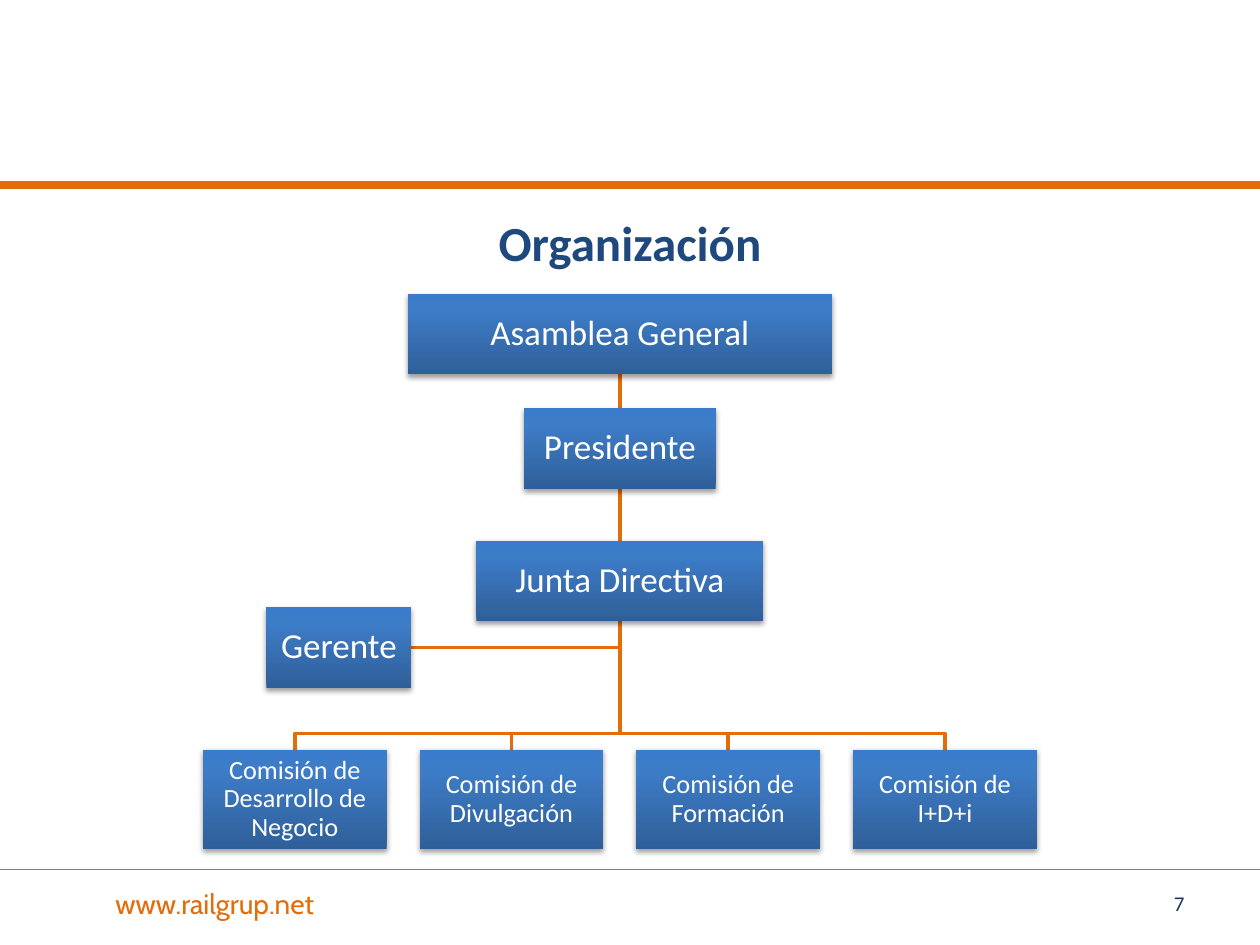
from copy import deepcopy

from lxml import etree
from pptx import Presentation
from pptx.dml.color import RGBColor
from pptx.enum.shapes import MSO_CONNECTOR, MSO_SHAPE
from pptx.enum.text import MSO_ANCHOR, PP_ALIGN
from pptx.oxml.ns import qn
from pptx.util import Inches, Pt

ORANGE = RGBColor(0xE4, 0x6C, 0x0A)
GREY = RGBColor(0x7F, 0x7F, 0x7F)
NAVY = RGBColor(0x1F, 0x49, 0x7D)
DARK_NAVY = RGBColor(0x17, 0x37, 0x5E)
WHITE = RGBColor(0xFF, 0xFF, 0xFF)
BOX_GRADIENT = [
    (0, RGBColor(0x2F, 0x5F, 0x99)),
    (0.8, RGBColor(0x3D, 0x7C, 0xC7)),
    (1, RGBColor(0x3A, 0x7C, 0xCB)),
]
COMMISSIONS = [
    "Comisión de Desarrollo de Negocio",
    "Comisión de Divulgación",
    "Comisión de Formación",
    "Comisión de I+D+i",
]


def write(frame, text, size, color, align, font="Calibri", bold=False):
    """Write one formatted run into a text frame."""
    frame.word_wrap = True
    paragraph = frame.paragraphs[0]
    paragraph.alignment = align
    run = paragraph.add_run()
    run.text = text
    run.font.name = font
    run.font.size = Pt(size)
    run.font.bold = bold
    run.font.color.rgb = color
    return paragraph


def add_line(slide, start, end, color, weight):
    """Draw a straight line without shadow between two points in inches."""
    points = [Inches(value) for value in (*start, *end)]
    line = slide.shapes.add_connector(MSO_CONNECTOR.STRAIGHT, *points)
    line.line.color.rgb = color
    line.line.width = Pt(weight)
    etree.SubElement(line._element.spPr, qn("a:effectLst"))


def add_link(slide, *points):
    """Draw an angled orange link through points given in inches."""
    start, *rest = [(Inches(x), Inches(y)) for x, y in points]
    builder = slide.shapes.build_freeform(*start)
    builder.add_line_segments(rest, close=False)
    link = builder.convert_to_shape()
    link.shadow.inherit = False
    link.fill.background()
    link.line.color.rgb = ORANGE
    link.line.width = Pt(2)


def shade(box):
    """Give a box the blue vertical gradient and a soft shadow below."""
    box.fill.gradient()
    box.fill.gradient_angle = 90
    stop_list = box._element.spPr.find(".//" + qn("a:gsLst"))
    stop_list.append(deepcopy(stop_list[-1]))
    for stop, (position, color) in zip(box.fill.gradient_stops, BOX_GRADIENT):
        stop.position = position
        stop.color.rgb = color
    box.line.fill.background()
    box.shadow.inherit = False
    effects = box._element.spPr.find(qn("a:effectLst"))
    shadow = etree.SubElement(effects, qn("a:outerShdw"), blurRad="40000",
                              dist="20000", dir="5400000", rotWithShape="0")
    black = etree.SubElement(shadow, qn("a:srgbClr"), val="000000")
    etree.SubElement(black, qn("a:alpha"), val="38000")


def add_unit(slide, text, center, top, width, height=0.64, size=20):
    """Add one unit of the organisation, centred on a horizontal position."""
    unit = slide.shapes.add_shape(
        MSO_SHAPE.RECTANGLE, Inches(center - width / 2), Inches(top),
        Inches(width), Inches(height))
    shade(unit)
    frame = unit.text_frame
    frame.vertical_anchor = MSO_ANCHOR.MIDDLE
    frame.margin_left = frame.margin_right = Inches(0.01)
    frame.margin_top = frame.margin_bottom = Inches(0.01)
    paragraph = write(frame, text, size, WHITE, PP_ALIGN.CENTER)
    paragraph.line_spacing = 0.9


def add_chart_tree(slide, left, top, width, height):
    """Draw the organisation tree inside the given box."""
    axis = left + width / 2
    unit_height = 0.64
    president_top, board_top, manager_top = top + 0.91, top + 1.96, top + 2.49
    commission_width, commission_height = 1.46, 0.79
    commission_top = top + height - commission_height
    bus = commission_top - 0.13
    pitch = (width - commission_width) / (len(COMMISSIONS) - 1)
    centers = [left + commission_width / 2 + i * pitch
               for i in range(len(COMMISSIONS))]
    manager_center, manager_width = left + 1.08, 1.15
    manager_middle = manager_top + unit_height / 2

    add_link(slide, (axis, president_top + unit_height), (axis, manager_middle),
             (manager_center + manager_width / 2, manager_middle))
    for center in centers:
        add_link(slide, (axis, board_top + unit_height), (axis, bus),
                 (center, bus), (center, commission_top))
    for upper, lower in [(top, president_top), (president_top, board_top)]:
        add_line(slide, (axis, upper + unit_height), (axis, lower), ORANGE, 2)

    add_unit(slide, "Asamblea General", axis, top, 3.37)
    add_unit(slide, "Presidente", axis, president_top, 1.52)
    add_unit(slide, "Junta Directiva", axis, board_top, 2.28)
    for name, center in zip(COMMISSIONS, centers):
        add_unit(slide, name, center, commission_top, commission_width,
                 commission_height, 15)
    add_unit(slide, "Gerente", manager_center, manager_top, manager_width)


def add_heading(slide, left, top, width, height):
    """Place and format the slide title in the given box."""
    title = slide.shapes.title
    title.left, title.top = Inches(left), Inches(top)
    title.width, title.height = Inches(width), Inches(height)
    title.text_frame.vertical_anchor = MSO_ANCHOR.TOP
    write(title.text_frame, "Organización", 28, NAVY, PP_ALIGN.CENTER, bold=True)


def add_footer(slide, left, top, width, height):
    """Add the web address and page number at the two ends of the box."""
    label_width = 2.33
    labels = [
        (left, "www.railgrup.net", 16, ORANGE, PP_ALIGN.CENTER, "Cabin"),
        (left + width - label_width, "7", 12, DARK_NAVY, PP_ALIGN.RIGHT, "Calibri"),
    ]
    for label_left, *content in labels:
        label = slide.shapes.add_textbox(Inches(label_left), Inches(top),
                                         Inches(label_width), Inches(height))
        label.text_frame.vertical_anchor = MSO_ANCHOR.MIDDLE
        write(label.text_frame, *content)


def main():
    """Build and save the organisation slide."""
    deck = Presentation()
    deck.slide_width, deck.slide_height = Inches(10), Inches(7.5)
    slide = deck.slides.add_slide(deck.slide_layouts[5])
    add_line(slide, (0, 6.9), (10, 6.9), GREY, 0.75)
    add_line(slide, (0, 1.47), (10, 1.47), ORANGE, 4.5)
    add_chart_tree(slide, 1.61, 2.33, 6.62, 4.41)
    add_heading(slide, 0.51, 1.64, 8.98, 0.79)
    add_footer(slide, 0.54, 6.97, 8.96, 0.4)
    deck.save("out.pptx")


if __name__ == "__main__":
    main()
